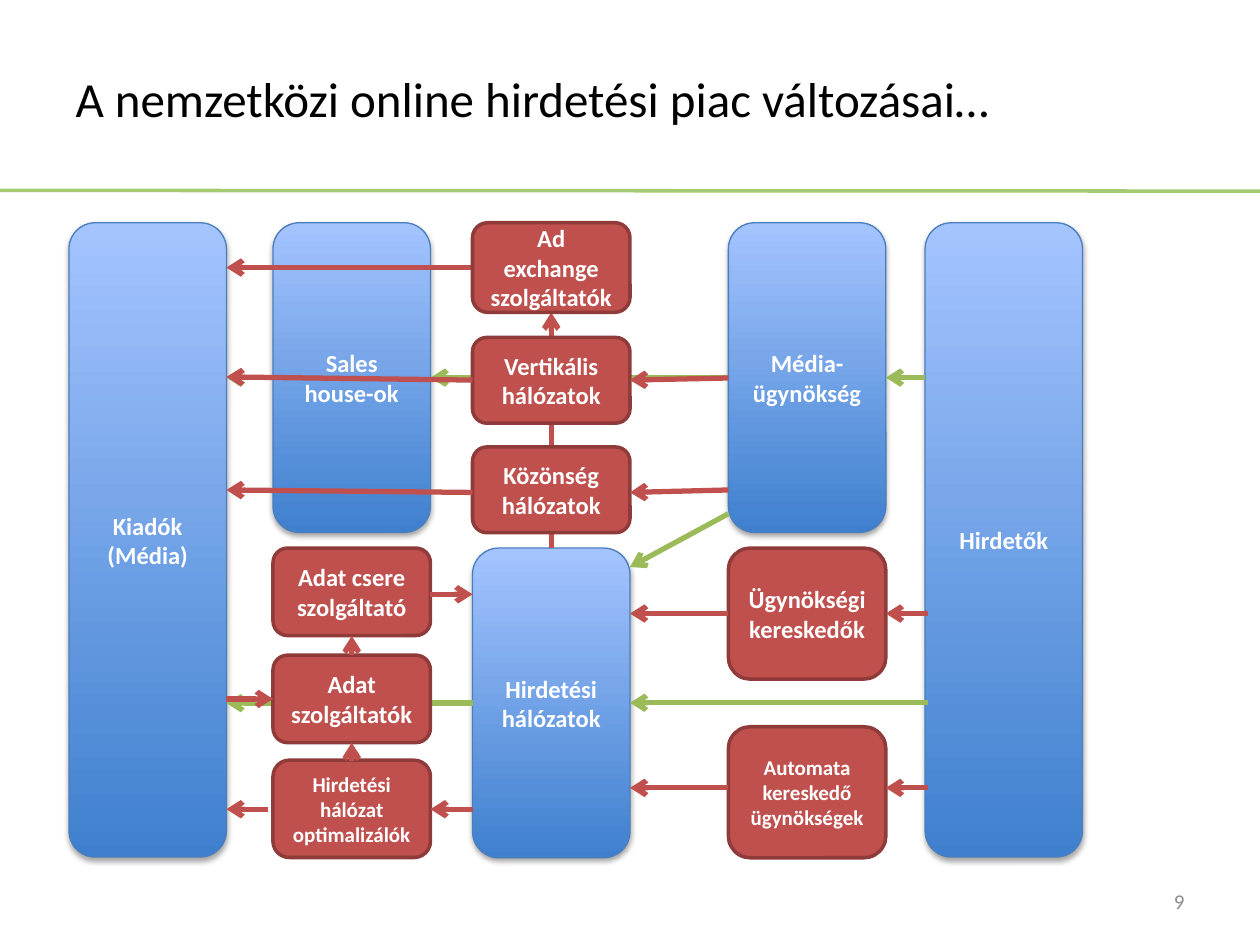
"""Build the slide on the changes of the international online advertising market."""
from dataclasses import dataclass

import pptx
import pptx.dml.color
import pptx.enum.dml
import pptx.enum.shapes
import pptx.enum.text
import pptx.oxml
import pptx.oxml.ns
import pptx.util

Pt = pptx.util.Pt
FONT = "Calibri"
COLORS = {
    "black": "000000", "white": "FFFFFF", "number": "8C8C8C", "rule": "A3CC72",
    "blue_bottom": "3F80CE", "blue_top": "A4C4FF", "blue_line": "4B7EBC",
    "red": "C0504D", "red_line": "8E3B39", "green": "9BBB59",
}
BOX_WIDTH = 90
PUBLISHERS, SALES, NETWORKS, AGENCIES, ADVERTISERS = 39.4, 156, 270, 416.2, 528.6
PUBLISHERS_RIGHT, SALES_RIGHT, NETWORKS_RIGHT, AGENCIES_RIGHT = (
    left + BOX_WIDTH for left in (PUBLISHERS, SALES, NETWORKS, AGENCIES))
ADVERTISERS_INNER = ADVERTISERS + 1.6
SALES_CENTER, NETWORKS_CENTER = SALES + BOX_WIDTH / 2, NETWORKS + BOX_WIDTH / 2
TOP, LOWER_TOP = 127.3, 313.2
FULL_HEIGHT, HALF_HEIGHT = 362.5, 177


@dataclass(frozen=True)
class Box:
    """A labelled rounded box."""
    text: str
    left: float
    top: float
    height: float
    size: float = 14


@dataclass(frozen=True)
class Arrow:
    """An arrow between two points."""
    start_x: float
    start_y: float
    end_x: float
    end_y: float
    color: str = "red"


BLUE_BOXES = [
    Box("Kiadók (Média)", PUBLISHERS, TOP, FULL_HEIGHT),
    Box("Média-ügynökség", AGENCIES, TOP, HALF_HEIGHT),
    Box("Hirdetők", ADVERTISERS, TOP, FULL_HEIGHT),
    Box("Hirdetési hálózatok", NETWORKS, LOWER_TOP, HALF_HEIGHT),
    Box("Sales house-ok", SALES, TOP, HALF_HEIGHT),
]
BACK_ARROWS = [
    Arrow(ADVERTISERS, 215.8, AGENCIES_RIGHT, 215.8, "green"),
    Arrow(AGENCIES, 215.8, SALES_RIGHT, 215.8, "green"),
    Arrow(SALES, 215.8, PUBLISHERS_RIGHT, 215.8, "green"),
    Arrow(ADVERTISERS_INNER, 401.6, NETWORKS_RIGHT, 401.6, "green"),
    Arrow(NETWORKS, 401.8, PUBLISHERS_RIGHT, 401.8, "green"),
    Arrow(NETWORKS, 152.9, PUBLISHERS_RIGHT, 152.9),
    Arrow(NETWORKS_CENTER, LOWER_TOP, NETWORKS_CENTER, 178.6),
]
RED_BOXES = [
    Box("Ad exchange szolgáltatók", NETWORKS, TOP, 51.2),
    Box("Hirdetési hálózat optimalizálók", SALES, 434.4, 55.6, 12),
    Box("Adat csere\nszolgáltató", SALES, LOWER_TOP, 50),
    Box("Adat szolgáltatók", SALES, 374.4, 50),
    Box("Automata kereskedő ügynökségek", AGENCIES, 415.3, 74.9, 12),
    Box("Ügynökségi kereskedők", AGENCIES, LOWER_TOP, 74.9),
    Box("Vertikális hálózatok", NETWORKS, 192.8, 49),
    Box("Közönség hálózatok", NETWORKS, 255.4, 49),
]
FRONT_ARROWS = [
    Arrow(NETWORKS, 462.4, SALES_RIGHT, 462.4),
    Arrow(SALES - 2.6, 462.4, PUBLISHERS_RIGHT, 462.4),
    Arrow(AGENCIES, 216, NETWORKS_RIGHT, 217.2),
    Arrow(NETWORKS, 217.2, PUBLISHERS_RIGHT, 215.4),
    Arrow(AGENCIES, 280, NETWORKS_RIGHT, 281.4),
    Arrow(NETWORKS, 281.4, PUBLISHERS_RIGHT, 280),
    Arrow(SALES_CENTER, 434.4, SALES_CENTER, 424.4),
    Arrow(PUBLISHERS_RIGHT, 399.4, SALES, 399.4),
    Arrow(SALES_CENTER, 374.4, SALES_CENTER, 363.4),
    Arrow(SALES_RIGHT, 339.6, NETWORKS, 339.6),
    Arrow(ADVERTISERS_INNER, 350.6, AGENCIES_RIGHT, 350.6),
    Arrow(AGENCIES, 350.6, NETWORKS_RIGHT, 350.6),
    Arrow(ADVERTISERS_INNER, 450.2, AGENCIES_RIGHT, 450.2),
    Arrow(AGENCIES, 450.2, NETWORKS_RIGHT, 450.2),
    Arrow(AGENCIES, 293.6, NETWORKS_RIGHT, 324, "green"),
]


def rgb(name: str) -> pptx.dml.color.RGBColor:
    """Return the named colour."""
    return pptx.dml.color.RGBColor.from_string(COLORS[name])


def set_text(shape, text: str, size: float, color: str, alignment: str, bold: bool = False) -> None:
    """Write text into a shape and format it."""
    frame = shape.text_frame
    frame.text = text
    frame.word_wrap = True
    frame.vertical_anchor = pptx.enum.text.MSO_ANCHOR.MIDDLE
    for paragraph in frame.paragraphs:
        paragraph.alignment = pptx.enum.text.PP_ALIGN[alignment]
        for run in paragraph.runs:
            run.font.name = FONT
            run.font.size = Pt(size)
            run.font.bold = bold
            run.font.color.rgb = rgb(color)


def add_box(slide, box: Box, line: str, line_width: float):
    """Add a rounded box with centred bold text."""
    shape = slide.shapes.add_shape(
        pptx.enum.shapes.MSO_SHAPE.ROUNDED_RECTANGLE,
        Pt(box.left), Pt(box.top), Pt(BOX_WIDTH), Pt(box.height))
    shape.shadow.inherit = False
    shape.line.color.rgb = rgb(line)
    shape.line.width = Pt(line_width)
    set_text(shape, box.text, box.size, "white", "CENTER", bold=True)
    return shape


def add_red_box(slide, box: Box) -> None:
    """Add a flat red box."""
    shape = add_box(slide, box, "red_line", 2)
    shape.fill.solid()
    shape.fill.fore_color.rgb = rgb("red")


def add_blue_box(slide, box: Box) -> None:
    """Add a blue gradient box with a soft shadow below it."""
    shape = add_box(slide, box, "blue_line", 0.75)
    shape.fill.gradient()
    shape.fill.gradient_angle = 90
    for stop, name in zip(shape.fill.gradient_stops, ("blue_bottom", "blue_top")):
        stop.color.rgb = rgb(name)
    effects = shape._element.spPr.find(pptx.oxml.ns.qn("a:effectLst"))
    effects.append(pptx.oxml.parse_xml(
        f'<a:outerShdw {pptx.oxml.ns.nsdecls("a")} blurRad="{Pt(3.1)}" dist="{Pt(1.8)}" '
        f'dir="5400000" rotWithShape="0"><a:srgbClr val="{COLORS["black"]}">'
        '<a:alpha val="35000"/></a:srgbClr></a:outerShdw>'))


def add_line(slide, arrow: Arrow, width: float = 3, head: bool = True) -> None:
    """Add a straight line, with an open arrowhead at its end if wanted."""
    connector = slide.shapes.add_connector(
        pptx.enum.shapes.MSO_CONNECTOR.STRAIGHT,
        Pt(arrow.start_x), Pt(arrow.start_y), Pt(arrow.end_x), Pt(arrow.end_y))
    connector.line.color.rgb = rgb(arrow.color)
    connector.line.width = Pt(width)
    namespace = pptx.oxml.ns.nsdecls("a")
    if head:
        connector.line._get_or_add_ln().append(
            pptx.oxml.parse_xml(f'<a:tailEnd {namespace} type="arrow"/>'))
    connector._element.spPr.append(pptx.oxml.parse_xml(f"<a:effectLst {namespace}/>"))


def main() -> None:
    """Build and save the presentation."""
    presentation = pptx.Presentation()
    presentation.slide_width, presentation.slide_height = Pt(720), Pt(540)
    slide = presentation.slides.add_slide(presentation.slide_layouts[5])
    add_line(slide, Arrow(0, 108.8, 720, 109.2, "rule"), width=2, head=False)

    title = slide.shapes.title
    title.left, title.top, title.width, title.height = Pt(36), Pt(21.6), Pt(648), Pt(68.4)
    set_text(title, "A nemzetközi online hirdetési piac változásai…", 28, "black", "LEFT")
    number = slide.shapes.add_textbox(Pt(645.8), Pt(500.5), Pt(38.2), Pt(28.8))
    set_text(number, "9", 12, "number", "RIGHT")

    for box in BLUE_BOXES:
        add_blue_box(slide, box)
    for arrow in BACK_ARROWS:
        add_line(slide, arrow)
    for box in RED_BOXES:
        add_red_box(slide, box)
    for arrow in FRONT_ARROWS:
        add_line(slide, arrow)
    presentation.save("out.pptx")


if __name__ == "__main__":
    main()
